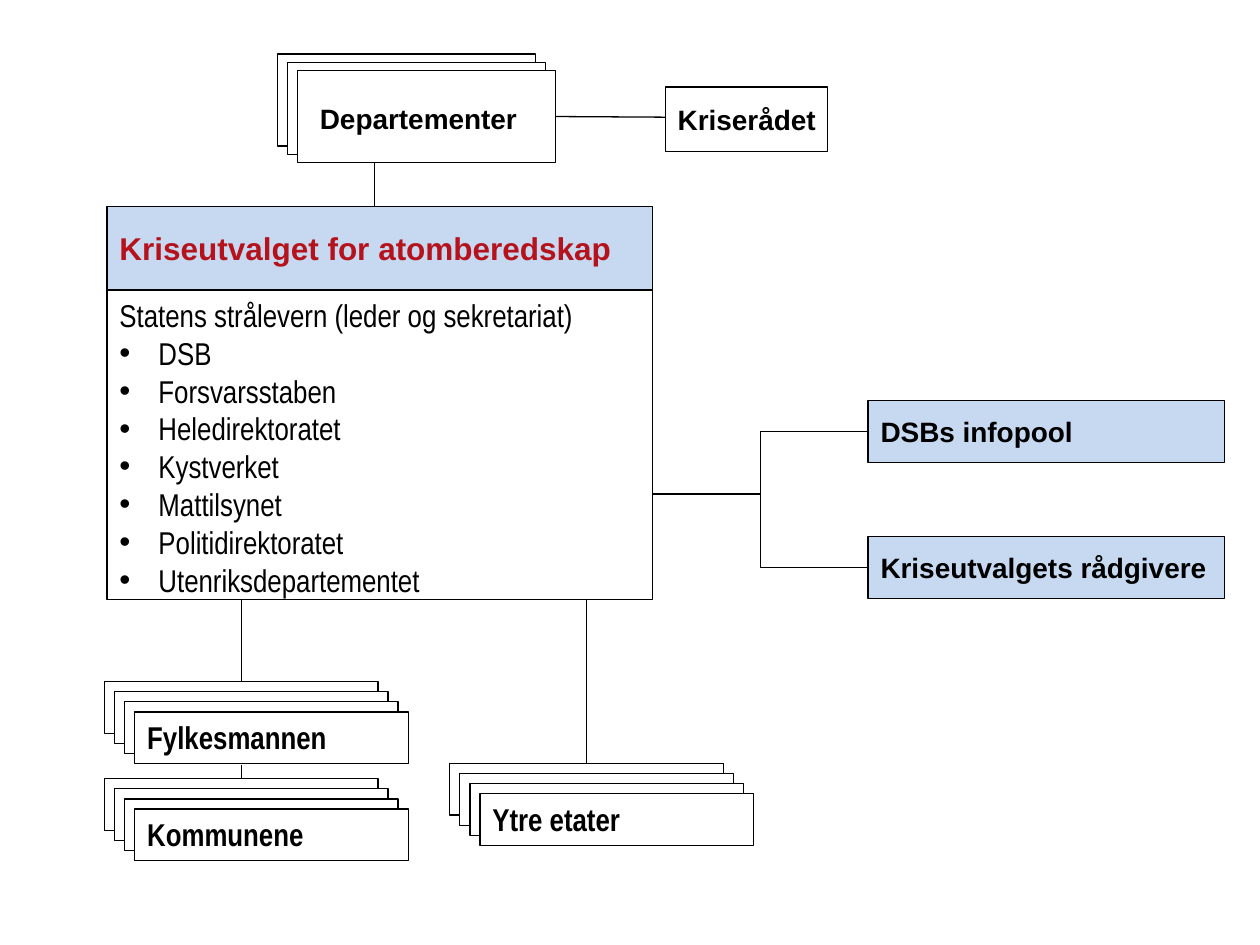
from lxml import etree
from pptx import Presentation
from pptx.dml.color import RGBColor
from pptx.enum.shapes import MSO_CONNECTOR, MSO_SHAPE
from pptx.enum.text import MSO_ANCHOR, PP_ALIGN
from pptx.oxml.ns import qn
from pptx.util import Inches, Pt

RECT = MSO_SHAPE.RECTANGLE
STRAIGHT, ELBOW = MSO_CONNECTOR.STRAIGHT, MSO_CONNECTOR.ELBOW
TOP, MIDDLE = MSO_ANCHOR.TOP, MSO_ANCHOR.MIDDLE
LEFT = PP_ALIGN.LEFT
SIDE_TOP, SIDE_LEFT, SIDE_RIGHT = 0, 1, 3

BLACK = RGBColor(0x00, 0x00, 0x00)
WHITE = RGBColor(0xFF, 0xFF, 0xFF)
PALE_BLUE = RGBColor(0xC6, 0xD9, 0xF1)
RED = RGBColor(0xB5, 0x12, 0x1B)

MEMBERS = ["DSB", "Forsvarsstaben", "Heledirektoratet", "Kystverket",
           "Mattilsynet", "Politidirektoratet", "Utenriksdepartementet"]


def add_box(shapes, x, y, w, h, fill=WHITE, line_width=0.75):
    s = shapes.add_shape(RECT, Inches(x), Inches(y), Inches(w), Inches(h))
    s.shadow.inherit = False
    s.fill.solid()
    s.fill.fore_color.rgb = fill
    s.line.color.rgb = BLACK
    s.line.width = Pt(line_width)
    return s


def add_run(p, text, size, font="Arial", color=BLACK, bold=True):
    p.alignment = LEFT
    r = p.add_run()
    r.text = text
    r.font.size = Pt(size)
    r.font.name = font
    r.font.bold = bold
    r.font.color.rgb = color


def set_label(s, text, size=16, anchor=MIDDLE, wrap=True, **style):
    tf = s.text_frame
    tf.word_wrap = wrap
    tf.vertical_anchor = anchor
    add_run(tf.paragraphs[0], text, size, **style)


def add_stack(shapes, x, y, w, h, count, dx=0.08, dy=0.08):
    """Group of overlapping boxes, listed from back to front."""
    group = shapes.add_group_shape()
    boxes = [add_box(group.shapes, x + i * dx, y + i * dy, w, h)
             for i in range(count)]
    return group, boxes


def add_unit_stack(shapes, x, y, text):
    """Four stacked boxes with a name on the front one; returns the back one."""
    _, boxes = add_stack(shapes, x, y, 2.17, 0.41, 4)
    set_label(boxes[-1], text, 18, TOP, font="Arial Narrow")
    return boxes[0]


def add_line(shapes, x1, y1, x2, y2, kind=STRAIGHT):
    c = shapes.add_connector(kind, Inches(x1), Inches(y1), Inches(x2), Inches(y2))
    c.line.color.rgb = BLACK
    c.line.width = Pt(0.75)
    etree.SubElement(c._element.spPr, qn("a:effectLst"))
    return c


def add_drop(shapes, y, box):
    """Vertical line from y down to the middle of the box's top side."""
    x = (box.left + box.width / 2) / Inches(1)
    add_line(shapes, x, y, x, box.top / Inches(1)).end_connect(box, SIDE_TOP)


def set_bend(c, percent):
    """Place the bend of an elbow connector along its length."""
    av = c._element.spPr.find(qn("a:prstGeom")).get_or_add_avLst()
    gd = etree.SubElement(av, qn("a:gd"))
    gd.set("name", "adj1")
    gd.set("fmla", f"val {percent * 1000}")


def add_member_list(shapes):
    s = add_box(shapes, 0.85, 2.3, 4.33, 2.46)
    set_label(s, "Statens strålevern (leder og sekretariat)", 18, TOP,
              font="Arial Narrow", bold=False)
    for name in MEMBERS:
        p = s.text_frame.add_paragraph()
        add_run(p, name, 18, "Arial Narrow", bold=False)
        pPr = p._p.get_or_add_pPr()
        pPr.set("marL", str(Inches(0.31)))
        pPr.set("indent", str(-Inches(0.31)))
        etree.SubElement(pPr, qn("a:buFont")).set("typeface", "Arial")
        etree.SubElement(pPr, qn("a:buChar")).set("char", "•")


def main():
    prs = Presentation()
    prs.slide_width, prs.slide_height = Inches(10), Inches(7.5)
    shapes = prs.slides.add_slide(prs.slide_layouts[6]).shapes

    # Subordinate units
    county = add_unit_stack(shapes, 0.83, 5.41, "Fylkesmannen")
    municipal = add_unit_stack(shapes, 0.83, 6.18, "Kommunene")
    agencies = add_unit_stack(shapes, 3.57, 6.06, "Ytre etater")

    # Crisis committee
    add_member_list(shapes)
    header = add_box(shapes, 0.85, 1.64, 4.33, 0.66, PALE_BLUE, 1)
    set_label(header, "Kriseutvalget for atomberedskap", 18, wrap=False, color=RED)

    # Support functions
    infopool = add_box(shapes, 6.89, 3.18, 2.83, 0.49, PALE_BLUE)
    set_label(infopool, "DSBs infopool")
    advisers = add_box(shapes, 6.89, 4.26, 2.83, 0.49, PALE_BLUE)
    set_label(advisers, "Kriseutvalgets rådgivere", wrap=False)

    # Ministries and crisis council
    group, ministries = add_stack(shapes, 2.2, 0.43, 2.05, 0.73, 3, dy=0.065)
    name = group.shapes.add_textbox(Inches(2.44), Inches(0.76), Inches(1.81), Inches(0.37))
    set_label(name, "Departementer", anchor=TOP)
    link = add_line(shapes, 4.41, 0.93, 5.28, 0.93)
    link.begin_connect(ministries[-1], SIDE_RIGHT)
    council = add_box(shapes, 5.28, 0.69, 1.29, 0.51)
    set_label(council, "Kriserådet", wrap=False)

    # Lines of command
    add_line(shapes, 2.97, 1.29, 2.97, 1.64)
    for y, unit in [(4.76, county), (6.07, municipal), (4.76, agencies)]:
        add_drop(shapes, y, unit)

    # Branch to the support functions
    branch = add_line(shapes, 6.89, 3.42, 5.18, 3.92, ELBOW)
    branch.begin_connect(infopool, SIDE_LEFT)
    branch = add_line(shapes, 6.89, 4.51, 6.03, 3.92, ELBOW)
    branch.begin_connect(advisers, SIDE_LEFT)
    set_bend(branch, 99)

    prs.save("out.pptx")


if __name__ == "__main__":
    main()
